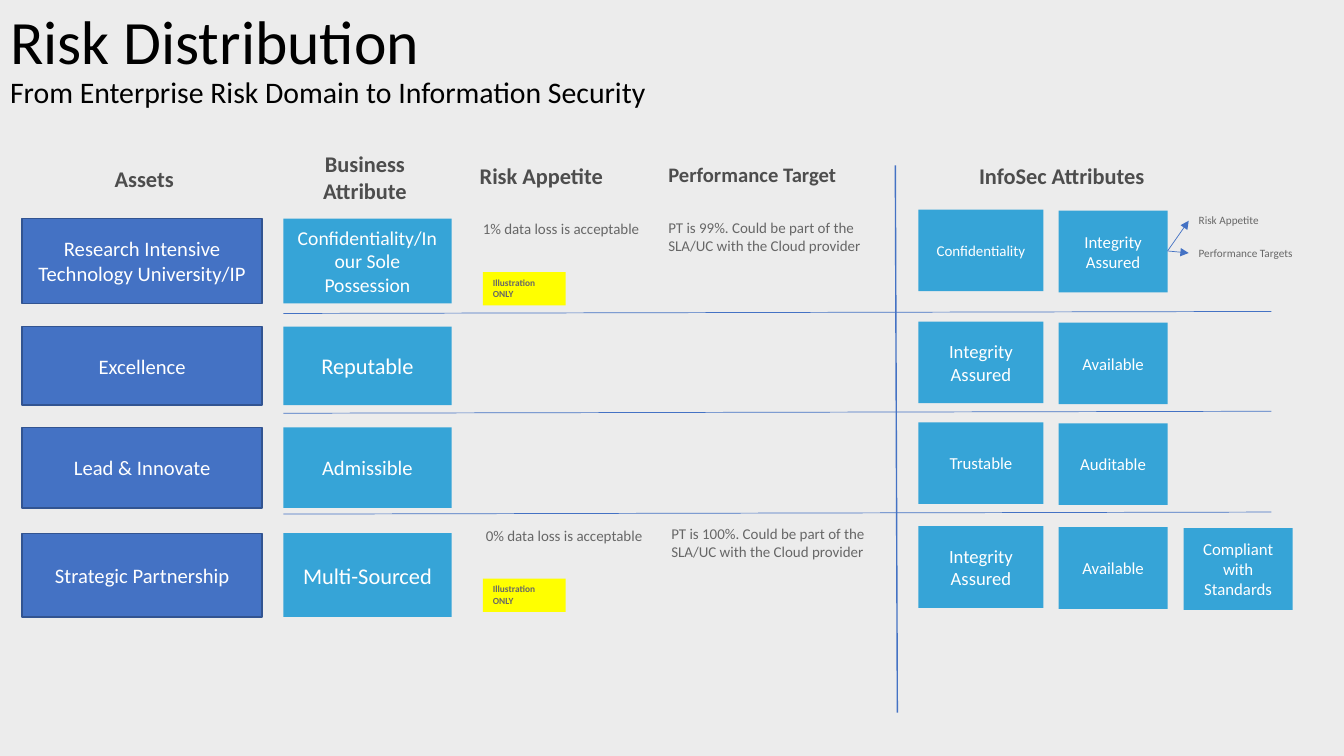
from lxml import etree
from pptx import Presentation
from pptx.dml.color import RGBColor
from pptx.enum import shapes, text
from pptx.oxml import ns
from pptx.util import Inches, Pt

FONT = "Calibri"
COLORS = {"back": "ECECEC", "title": "000000", "head": "4D4D4D", "note": "676767",
          "white": "FFFFFF", "asset": "4472C4", "edge": "325491",
          "attribute": "36A4D7", "flag": "FFFF00"}
LEFT, CENTER = text.PP_ALIGN.LEFT, text.PP_ALIGN.CENTER
TOP, MIDDLE = text.MSO_ANCHOR.TOP, text.MSO_ANCHOR.MIDDLE

TITLE = [("Risk Distribution", 44), ("From Enterprise Risk Domain to Information Security", 21.3)]

# text, left, top, width, height, size, alignment
HEADINGS = [
    ("Assets", 0.24, 1.59, 2.38, 0.37, 16, CENTER),
    ("Business Attribute", 2.92, 1.44, 1.4, 0.64, 16, CENTER),
    ("Risk Appetite", 4.66, 1.56, 1.86, 0.37, 16, LEFT),
    ("Performance Target", 6.53, 1.56, 2.33, 0.35, 14.7, LEFT),
    ("InfoSec Attributes", 9.09, 1.56, 2.88, 0.37, 16, CENTER),
]
# top, height, asset, (business attribute, size), InfoSec top, InfoSec attributes
ROWS = [
    (2.17, 0.84, "Research Intensive Technology University/IP",
     ("Confidentiality/In our Sole Possession", 14),
     2.08, [("Confidentiality", 10.7), ("Integrity Assured", 12)]),
    (3.24, 0.78, "Excellence", ("Reputable", 16),
     3.19, [("Integrity Assured", 13.3), ("Available", 12)]),
    (4.24, 0.8, "Lead & Innovate", ("Admissible", 14.7),
     4.19, [("Trustable", 12), ("Auditable", 12)]),
    (5.29, 0.83, "Strategic Partnership", ("Multi-Sourced", 16),
     5.22, [("Integrity Assured", 13.3), ("Available", 12), ("Compliant with Standards", 12)]),
]
ASSET_COL, BUSINESS_COL = (0.22, 2.38), (2.81, 1.67)
INFOSEC_COLS = [(9.11, 1.24), (10.5, 1.08), (11.74, 1.08)]
INFOSEC_HEIGHT, INFOSEC_STEP = 0.81, 0.01

# left, top of the appetite note, appetite, target, top of the flag
NOTES = [
    (4.69, 2.13, "1% data loss is acceptable",
     "PT is 99%. Could be part of the SLA/UC with the Cloud provider", 2.7),
    (4.72, 5.17, "0% data loss is acceptable",
     "PT is 100%. Could be part of the SLA/UC with the Cloud provider", 5.74),
]
TARGET_SHIFT, NOTE_WIDTH = 1.84, 2.26
FLAG = "Illustration ONLY"

# label, top of the label, height at which its arrow ends
CALLOUTS = [("Risk Appetite", 2.07, 2.19), ("Performance Targets", 2.39, 2.51)]
CALLOUT_LEFT, ARROW_START = 11.79, (11.58, 2.49)

DIVIDER = ((8.9, 7.07), (8.88, 1.64))
ROW_LINES, LINE_ENDS, LINE_RISE = [3.11, 4.1, 5.1], (2.81, 12.61), 0.02


def rgb(name):
    return RGBColor.from_string(COLORS[name])


def style(r, size, color, bold=False):
    r.font.name, r.font.size, r.font.bold = FONT, Pt(size), bold
    r.font.color.rgb = rgb(color)


def write(sp, words, size, color, align, anchor, bold=False):
    tf = sp.text_frame
    tf.word_wrap, tf.vertical_anchor = True, anchor
    p = tf.paragraphs[0]
    p.alignment = align
    r = p.add_run()
    r.text = words
    style(r, size, color, bold)


def label(s, words, box, size, color, align=LEFT, bold=False):
    sp = s.shapes.add_textbox(*map(Inches, box))
    write(sp, words, size, color, align, TOP, bold)


def block(s, box, fill, edge=None):
    sp = s.shapes.add_shape(shapes.MSO_SHAPE.RECTANGLE, *map(Inches, box))
    sp.shadow.inherit = False
    sp.fill.solid()
    sp.fill.fore_color.rgb = rgb(fill)
    if edge:
        sp.line.color.rgb = rgb(edge)
        sp.line.width = Pt(1)
    else:
        sp.line.fill.background()
    return sp


def line(s, start, end, width, arrow=False):
    c = s.shapes.add_connector(shapes.MSO_CONNECTOR.STRAIGHT, *map(Inches, start + end))
    c.line.color.rgb = rgb("asset")
    c.line.width = Pt(width)
    if arrow:
        etree.SubElement(c.line._get_or_add_ln(), ns.qn("a:tailEnd"), type="triangle")
    etree.SubElement(c._element.spPr, ns.qn("a:effectLst"))


def add_title(s):
    sp = s.shapes.title
    sp.left, sp.top, sp.width, sp.height = map(Inches, (0, 0.07, 12.7, 1.07))
    tf = sp.text_frame
    tf.auto_size, tf.vertical_anchor = text.MSO_AUTO_SIZE.NONE, MIDDLE
    p = tf.paragraphs[0]
    p.alignment, p.line_spacing = LEFT, 0.9
    for i, (words, size) in enumerate(TITLE):
        if i:
            p.add_line_break()
        r = p.add_run()
        r.text = words
        style(r, size, "title")


def add_rows(s):
    for top, height, asset, (business, size), info_top, attributes in ROWS:
        sp = block(s, (ASSET_COL[0], top, ASSET_COL[1], height), "asset", "edge")
        write(sp, asset, 14.7, "white", CENTER, MIDDLE)
        sp = block(s, (BUSINESS_COL[0], top, BUSINESS_COL[1], height), "attribute")
        write(sp, business, size, "white", CENTER, MIDDLE)
        for i, ((left, width), (words, size)) in enumerate(zip(INFOSEC_COLS, attributes)):
            box = (left, info_top + i * INFOSEC_STEP, width, INFOSEC_HEIGHT)
            write(block(s, box, "attribute"), words, size, "white", CENTER, MIDDLE)


def add_notes(s):
    for left, top, appetite, target, flag_top in NOTES:
        label(s, appetite, (left, top, NOTE_WIDTH, 0.28), 10.7, "note")
        label(s, target, (left + TARGET_SHIFT, top - 0.01, NOTE_WIDTH, 0.46), 10.7, "note")
        sp = block(s, (4.79, flag_top, 0.82, 0.33), "flag")
        write(sp, FLAG, 6.7, "note", LEFT, TOP, bold=True)
    for words, top, arrow_end in CALLOUTS:
        label(s, words, (CALLOUT_LEFT, top, 1.38, 0.24), 8, "note")
        line(s, ARROW_START, (CALLOUT_LEFT, arrow_end), 0.5, arrow=True)


def main():
    prs = Presentation()
    prs.slide_width, prs.slide_height = Inches(13.33), Inches(7.5)
    s = prs.slides.add_slide(prs.slide_layouts.get_by_name("Title Only"))
    s.background.fill.solid()
    s.background.fill.fore_color.rgb = rgb("back")
    add_title(s)
    for words, *box, size, align in HEADINGS:
        label(s, words, box, size, "head", align, bold=True)
    line(s, *DIVIDER, 1)
    for y in ROW_LINES:
        line(s, (LINE_ENDS[0], y), (LINE_ENDS[1], y - LINE_RISE), 0.5)
    add_rows(s)
    add_notes(s)
    prs.save("out.pptx")


if __name__ == "__main__":
    main()
